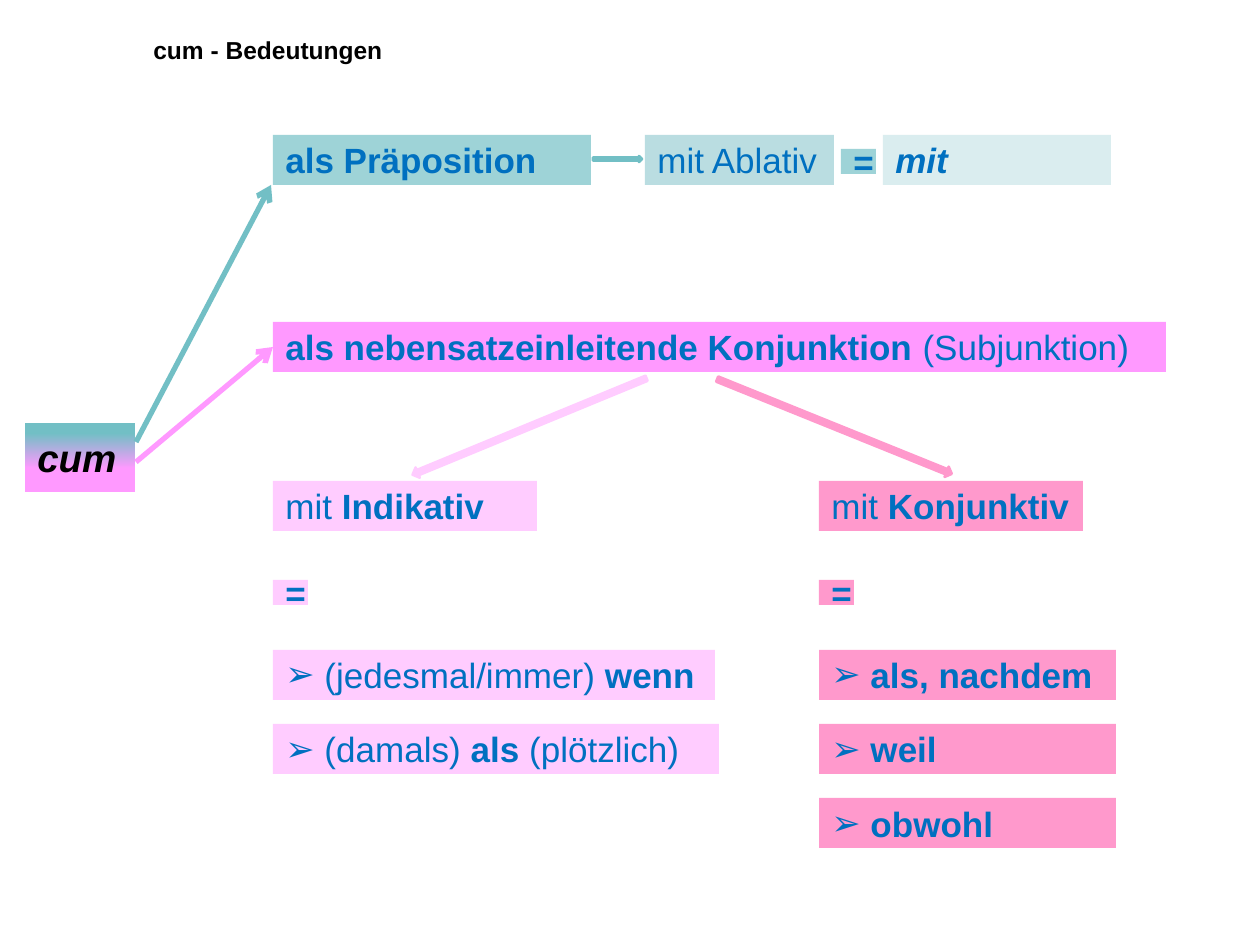
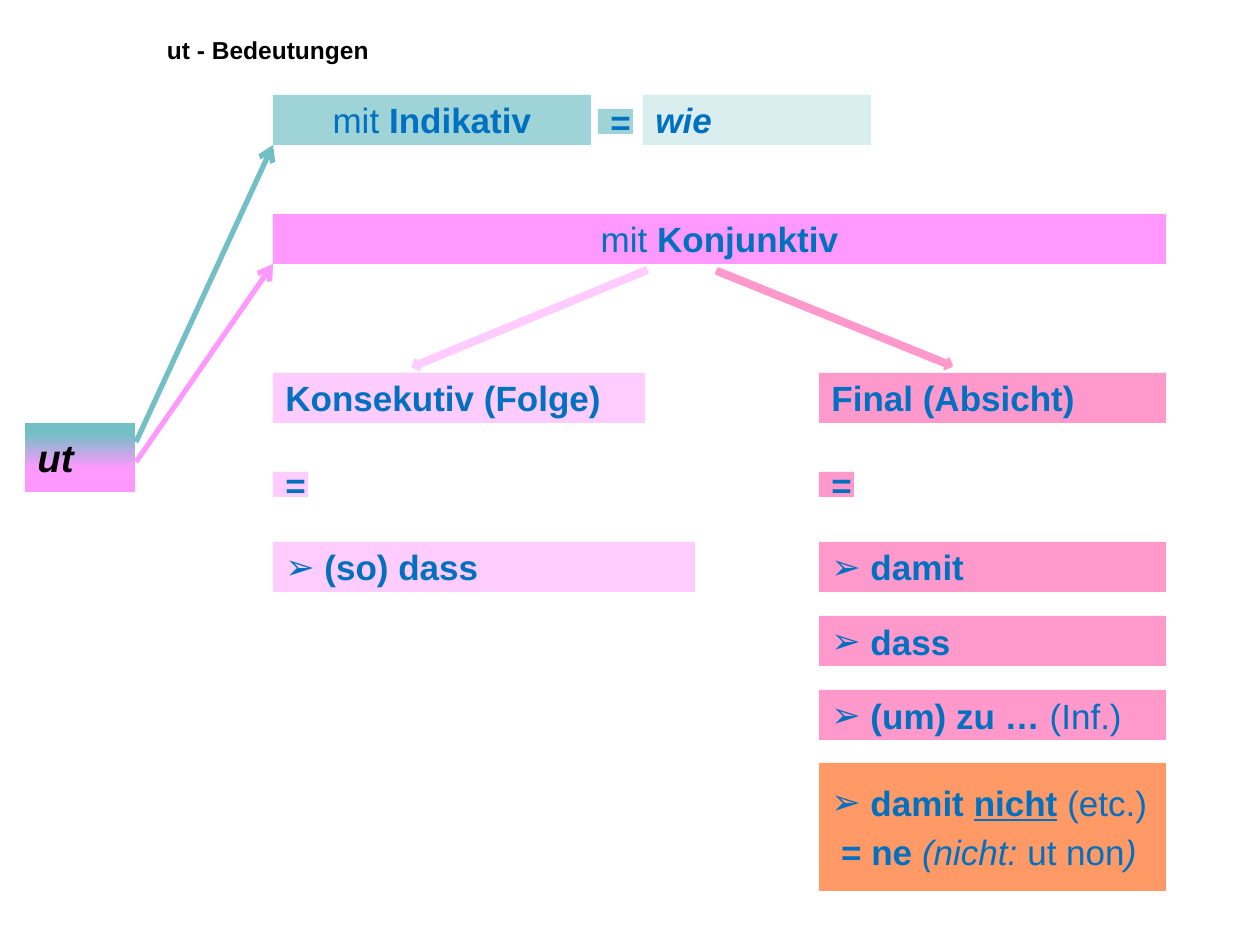
from lxml import etree
from pptx import Presentation
from pptx.dml.color import RGBColor
from pptx.enum.shapes import MSO_CONNECTOR, MSO_SHAPE
from pptx.enum.text import MSO_ANCHOR, MSO_AUTO_SIZE, PP_ALIGN
from pptx.oxml.ns import qn
from pptx.util import Emu, Pt

RECTANGLE, RIGHT_ARROW = MSO_SHAPE.RECTANGLE, MSO_SHAPE.RIGHT_ARROW
STRAIGHT = MSO_CONNECTOR.STRAIGHT
MIDDLE, NO_FIT = MSO_ANCHOR.MIDDLE, MSO_AUTO_SIZE.NONE
LEFT, CENTER = PP_ALIGN.LEFT, PP_ALIGN.CENTER

BLACK = RGBColor(0x00, 0x00, 0x00)
BLUE = RGBColor(0x00, 0x70, 0xC0)
TEAL = RGBColor(0x72, 0xBF, 0xC5)
MID_TEAL = RGBColor(0x9E, 0xD3, 0xD7)
SOFT_TEAL = RGBColor(0xBA, 0xDD, 0xE1)
PALE_TEAL = RGBColor(0xDA, 0xED, 0xEF)
MAGENTA = RGBColor(0xFF, 0x99, 0xFF)
LILAC = RGBColor(0xFF, 0xCC, 0xFF)
PINK = RGBColor(0xFF, 0x99, 0xCC)
ORANGE = RGBColor(0xFF, 0x99, 0x66)

FONT = "Arial"
PX_PER_INCH = 126
LEFT_COLUMN, RIGHT_COLUMN = 273, 819
ROW_HEIGHT = 50
LIST_STEP = 74


def px(length):
    return Emu(round(length * 914400 / PX_PER_INCH))


def add_text(paragraph, text, size=20, color=BLUE, style=""):
    """Add a run; style holds any of b (bold), i (italic), u (underlined)."""
    run = paragraph.add_run()
    run.text = text
    run.font.name = FONT
    run.font.size = Pt(size)
    run.font.color.rgb = color
    run.font.bold = "b" in style
    run.font.italic = "i" in style
    run.font.underline = "u" in style


def set_bullet(paragraph):
    properties = paragraph._p.get_or_add_pPr()
    properties.set("marL", "0")
    properties.set("indent", "0")
    etree.SubElement(properties, qn("a:buFont")).set("typeface", FONT)
    etree.SubElement(properties, qn("a:buChar")).set("char", "➢")


class MeaningDeck:
    def __init__(self):
        self.presentation = Presentation()
        self.presentation.slide_width = px(1260)
        self.presentation.slide_height = px(945)
        self.slide = None

    def add_slide(self, word):
        """Start a slide with its title and the gradient box of the word."""
        self.slide = self.presentation.slides.add_slide(
            self.presentation.slide_layouts[5])
        title = self.slide.shapes.title
        title.left, title.top, title.width, title.height = map(
            px, (25, 25, 486, 49))
        frame = title.text_frame
        frame.auto_size, frame.vertical_anchor = NO_FIT, MIDDLE
        frame.paragraphs[0].alignment = CENTER
        add_text(frame.paragraphs[0], f"{word} - Bedeutungen",
                 size=14, color=BLACK, style="b")

        root = self.box(25, 423, 110, [(word, "bi")], None, height=69,
                        size=22, color=BLACK)
        root.fill.gradient()
        root.fill.gradient_angle = 270
        for stop, position, color in zip(root.fill.gradient_stops,
                                         (0.15, 0.66), (TEAL, MAGENTA)):
            stop.position = position
            stop.color.rgb = color

    def box(self, left, top, width, runs, fill, height=ROW_HEIGHT,
            align=LEFT, bullet=False, **text_format):
        shape = self.slide.shapes.add_shape(
            RECTANGLE, px(left), px(top), px(width), px(height))
        shape.shadow.inherit = False
        shape.line.fill.background()
        if fill is not None:
            shape.fill.solid()
            shape.fill.fore_color.rgb = fill
        frame = shape.text_frame
        frame.word_wrap, frame.vertical_anchor = True, MIDDLE
        paragraph = frame.paragraphs[0]
        paragraph.alignment = align
        if bullet:
            set_bullet(paragraph)
        for text, style in runs:
            add_text(paragraph, text, style=style, **text_format)
        return shape

    def equals(self, left, top, fill):
        self.box(left, top, 35, [("=", "b")], fill, height=25, align=CENTER)

    def line_arrow(self, start, end, color, target=None):
        connector = self.slide.shapes.add_connector(
            STRAIGHT, *map(px, start + end))
        connector.line.color.rgb = color
        connector.line.width = Pt(3)
        tail = etree.SubElement(connector.line._get_or_add_ln(),
                                qn("a:tailEnd"))
        tail.set("type", "arrow")
        etree.SubElement(connector._element.spPr, qn("a:effectLst"))
        if target is not None:
            connector.end_connect(target, 1)

    def block_arrow(self, left, top, width, height, color, rotation=0):
        shape = self.slide.shapes.add_shape(
            RIGHT_ARROW, px(left), px(top), px(width), px(height))
        shape.shadow.inherit = False
        shape.rotation = rotation
        shape.fill.solid()
        shape.fill.fore_color.rgb = color
        shape.line.color.rgb = color
        shape.line.width = Pt(1.5)

    def column(self, left, top, heading, heading_width, items, fill):
        """Heading, equals sign and bulleted meanings (runs, width)."""
        self.box(left, top, heading_width, heading, fill)
        self.equals(left, top + 99, fill)
        for row, (runs, width) in enumerate(items):
            self.box(left, top + 169 + row * LIST_STEP, width, runs, fill,
                     bullet=True)

    def branch(self, top, runs, left_column, right_column, align=LEFT):
        """Wide magenta bar that forks into two columns."""
        bar = self.box(LEFT_COLUMN, top, 893, runs, MAGENTA, align=align)
        self.block_arrow(708, top + 99, 253, 11, PINK, rotation=22)
        self.block_arrow(403, top + 99, 253, 11, LILAC, rotation=157.6)
        self.column(LEFT_COLUMN, top + 159, *left_column, LILAC)
        self.column(RIGHT_COLUMN, top + 159, *right_column, PINK)
        return bar


def build_cum(deck):
    deck.add_slide("cum")
    # Preposition
    deck.box(LEFT_COLUMN, 135, 318, [("als Präposition", "b")], MID_TEAL)
    deck.block_arrow(593, 156, 49, 6, TEAL)
    deck.box(645, 135, 189, [("mit Ablativ", "")], SOFT_TEAL)
    deck.equals(841, 149, MID_TEAL)
    deck.box(883, 135, 228, [("mit", "bi")], PALE_TEAL)
    # Conjunction
    bar = deck.branch(
        322,
        [("als nebensatzeinleitende Konjunktion ", "b"),
         ("(Subjunktion)", "")],
        ([("mit ", ""), ("Indikativ", "b")], 264,
         [([(" (jedesmal/immer)", ""), (" wenn", "b")], 442),
          ([(" (damals) ", ""), ("als ", "b"), ("(plötzlich)", "")], 446)]),
        ([("mit ", ""), ("Konjunktiv", "b")], 264,
         [([(text, "b")], 297)
          for text in (" als, nachdem", " weil", " obwohl")]))
    # Arrows from the word
    deck.line_arrow((136, 442), (271, 185), TEAL)
    deck.line_arrow((136, 462), (270, 347), MAGENTA, target=bar)


def build_ut(deck):
    deck.add_slide("ut")
    # Indicative
    deck.box(LEFT_COLUMN, 95, 318, [("mit ", ""), ("Indikativ", "b")],
             MID_TEAL, align=CENTER)
    deck.equals(598, 109, MID_TEAL)
    deck.box(643, 95, 228, [("wie", "bi")], PALE_TEAL)
    # Subjunctive
    deck.branch(
        214, [("mit ", ""), ("Konjunktiv", "b")],
        ([("Konsekutiv (Folge)", "b")], 372, [([(" (so) dass", "b")], 422)]),
        ([("Final (Absicht)", "b")], 347,
         [([(" damit", "b")], 347), ([(" dass", "b")], 347),
          ([(" (um) zu … ", "b"), ("(Inf.)", "")], 347)]),
        align=CENTER)
    # Negated purpose clause
    negation = deck.box(
        RIGHT_COLUMN, 763, 347,
        [(" damit ", "b"), ("nicht", "bu"), (" ", "b"), ("(etc.)", "")],
        ORANGE, height=128, bullet=True)
    paragraph = negation.text_frame.add_paragraph()
    paragraph.alignment = LEFT
    paragraph.space_before = Pt(4)
    for text, style in ((" = ne ", "b"), ("(nicht: ", "i"),
                        ("ut non", ""), (")", "i")):
        add_text(paragraph, text, style=style)
    # Arrows from the word
    deck.line_arrow((136, 442), (273, 145), TEAL)
    deck.line_arrow((136, 462), (273, 264), MAGENTA)


def main():
    deck = MeaningDeck()
    build_cum(deck)
    build_ut(deck)
    deck.presentation.save("out.pptx")


if __name__ == "__main__":
    main()
